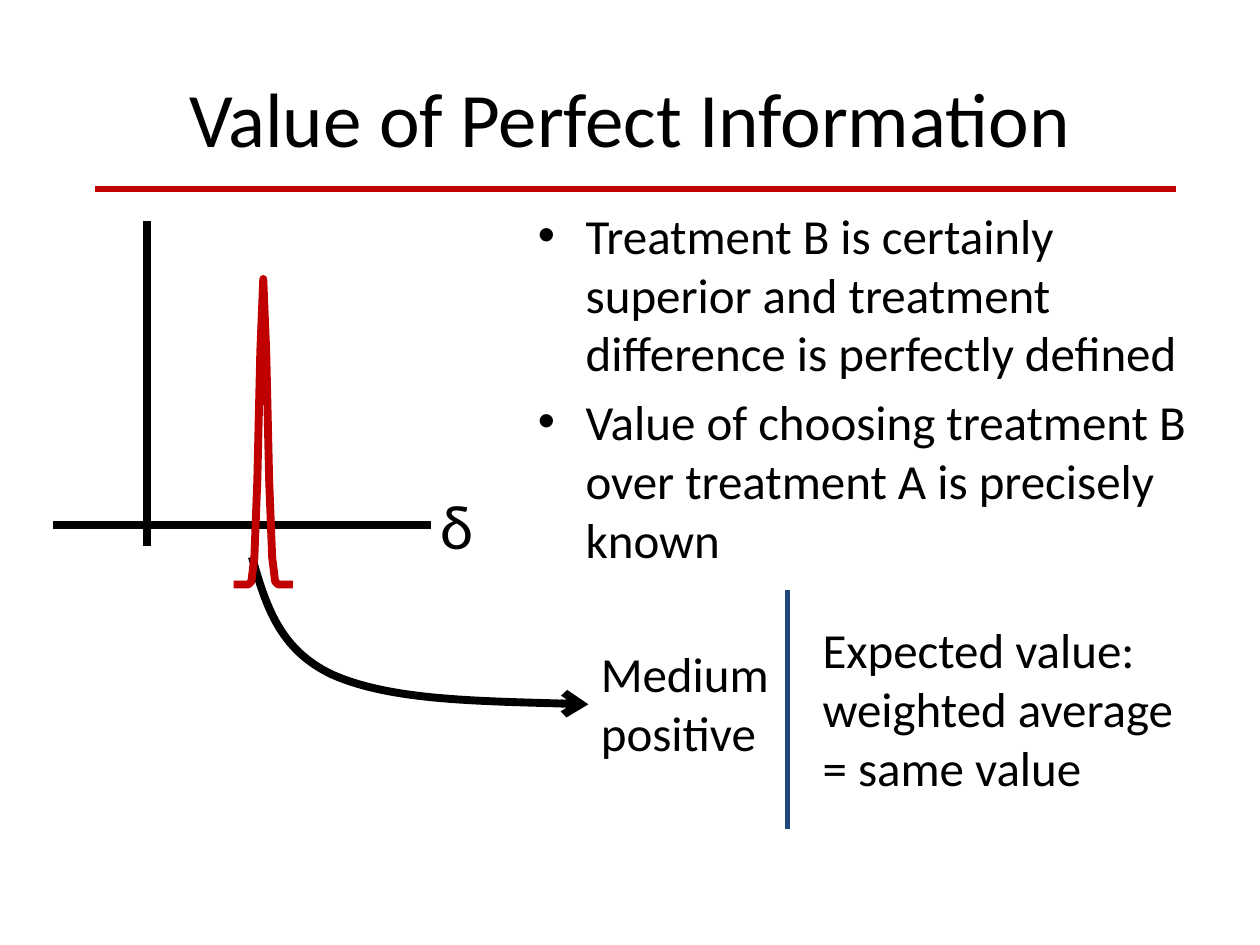
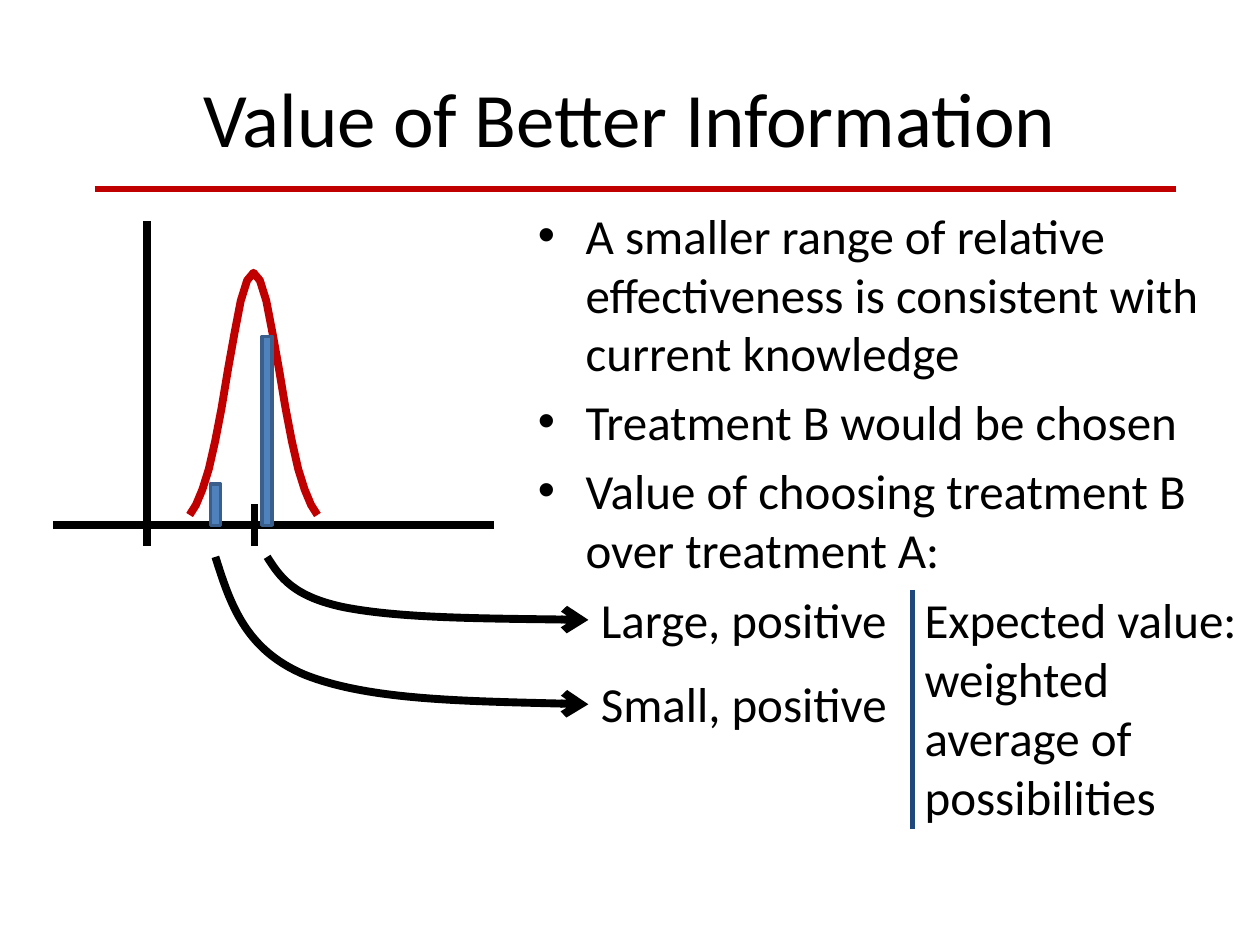
from lxml import etree
from pptx import Presentation
from pptx.chart.data import XyChartData
from pptx.dml.color import RGBColor
from pptx.enum.chart import XL_CHART_TYPE
from pptx.enum.shapes import MSO_CONNECTOR, MSO_SHAPE
from pptx.enum.text import MSO_ANCHOR, PP_ALIGN
from pptx.oxml.ns import qn
from pptx.util import Inches, Pt

BLACK = RGBColor(0x00, 0x00, 0x00)
RED = RGBColor(0xC0, 0x00, 0x00)
NAVY = RGBColor(0x1F, 0x49, 0x7D)
BAR_FILL = RGBColor(0x4F, 0x81, 0xBD)
BAR_EDGE = RGBColor(0x3A, 0x5F, 0x8C)

STRAIGHT = MSO_CONNECTOR.STRAIGHT
RECTANGLE = MSO_SHAPE.RECTANGLE
SMOOTH_SCATTER = XL_CHART_TYPE.XY_SCATTER_SMOOTH_NO_MARKERS
LEFT, CENTER = PP_ALIGN.LEFT, PP_ALIGN.CENTER
TOP, MIDDLE = MSO_ANCHOR.TOP, MSO_ANCHOR.MIDDLE

FONT = "Calibri"
TITLE_SIZE, BODY_SIZE, SYMBOL_SIZE = 44, 28, 36
HEAVY, THIN = 4.5, 3
PARAGRAPH_GAP = 5.6
BASELINE = 4.17
CALLOUT_TOP, CALLOUT_LEFT = 4.42, 4.67

# Two joined Bezier segments, as fractions of a callout's width and height
CALLOUT_CURVE = [(0, 0), (0.04, 0.32), (0.08, 0.63), (0.24, 0.8),
                 (0.41, 0.97), (0.7, 0.98), (1, 1)]


def inches(*lengths):
    return [Inches(length) for length in lengths]


class Deck:
    def __init__(self):
        self.prs = Presentation()
        self.prs.slide_width, self.prs.slide_height = inches(10, 7.5)
        self.slide = None

    def add_slide(self, title, bullets):
        """Start a slide with the shared title, rule, and bullet list."""
        self.slide = self.prs.slides.add_slide(self.prs.slide_layouts[6])
        self.text((0.5, 0.3, 9, 1.25), [title], TITLE_SIZE,
                  align=CENTER, anchor=MIDDLE)
        self.text((4.17, 1.58, 5.58, 3.33), bullets, gap=PARAGRAPH_GAP,
                  bulleted=True)
        self.line((0.75, 1.5), (9.33, 1.5), RED, THIN)

    def text(self, box, lines, size=BODY_SIZE, align=LEFT, anchor=TOP,
             gap=0, wrap=True, bulleted=False):
        frame = self.slide.shapes.add_textbox(*inches(*box)).text_frame
        frame.word_wrap = wrap
        frame.vertical_anchor = anchor
        frame.text = "\n".join(lines)
        for paragraph in frame.paragraphs:
            paragraph.alignment = align
            paragraph.space_before = Pt(gap)
            paragraph.font.name = FONT
            paragraph.font.size = Pt(size)
            paragraph.font.color.rgb = BLACK
            if bulleted:
                props = paragraph._p.get_or_add_pPr()
                props.set("marL", str(Inches(0.38)))
                props.set("indent", str(Inches(-0.38)))
                etree.SubElement(props, qn("a:buFont")).set("typeface", "Arial")
                etree.SubElement(props, qn("a:buChar")).set("char", "•")
                # Default run properties must follow the bullet
                props.append(props.find(qn("a:defRPr")))

    def line(self, start, end, color=BLACK, width=HEAVY):
        line = self.slide.shapes.add_connector(STRAIGHT, *inches(*start, *end))
        line.line.color.rgb = color
        line.line.width = Pt(width)
        etree.SubElement(line._element.spPr, qn("a:effectLst"))

    def axes(self, right):
        self.line((0.42, BASELINE), (right, BASELINE))
        self.line((1.17, 4.33), (1.17, 1.75))

    def bar(self, left, height):
        bar = self.slide.shapes.add_shape(
            RECTANGLE, *inches(left, BASELINE - height, 0.08, height))
        bar.shadow.inherit = False
        bar.fill.solid()
        bar.fill.fore_color.rgb = BAR_FILL
        bar.line.color.rgb = BAR_EDGE
        bar.line.width = Pt(2)

    def callout(self, left, height):
        """Draw a curved arrow from below the axis to the outcome labels."""
        width = CALLOUT_LEFT - left
        points = [inches(left + x * width, CALLOUT_TOP + y * height)
                  for x, y in CALLOUT_CURVE]
        builder = self.slide.shapes.build_freeform(*points[0])
        builder.add_line_segments(points[1:], close=False)
        arrow = builder.convert_to_shape()
        arrow.shadow.inherit = False
        arrow.fill.background()
        arrow.line.color.rgb = BLACK
        arrow.line.width = Pt(HEAVY)
        etree.SubElement(arrow.line._get_or_add_ln(),
                         qn("a:tailEnd")).set("type", "arrow")
        # Every three line points become one cubic segment
        steps = list(arrow._element.iter(qn("a:lnTo")))
        for first in range(0, len(steps), 3):
            curve = etree.Element(qn("a:cubicBezTo"))
            steps[first].addprevious(curve)
            for step in steps[first:first + 3]:
                curve.append(step[0])
                step.getparent().remove(step)

    def density(self, box, plot, xs, ys, x_range):
        """Draw a bell curve as a scatter chart with hidden axes."""
        data = XyChartData()
        series = data.add_series("Series 1")
        for x, y in zip(xs, ys):
            series.add_data_point(x, y)
        chart = self.slide.shapes.add_chart(
            SMOOTH_SCATTER, *inches(*box), data).chart
        chart.has_legend = chart.has_title = False
        chart.font.name, chart.font.size = FONT, Pt(10)
        chart.font.color.rgb = BLACK
        for axis, (low, high) in ((chart.category_axis, x_range),
                                  (chart.value_axis, (0, 120))):
            axis.minimum_scale, axis.maximum_scale = low, high
            axis.has_major_gridlines = False
            axis.visible = False
        curve = chart.plots[0].series[0]
        curve.smooth = True
        curve.format.line.color.rgb = RED
        curve.format.line.width = Pt(HEAVY)

        # Fixed inner plot area
        area = chart._chartSpace.find(".//" + qn("c:plotArea"))
        layout = area.find(qn("c:layout"))
        if layout is None:
            layout = etree.Element(qn("c:layout"))
            area.insert(0, layout)
        manual = etree.SubElement(layout, qn("c:manualLayout"))
        settings = [("layoutTarget", "inner"), ("xMode", "edge"),
                    ("yMode", "edge"), *zip("xywh", plot)]
        for tag, value in settings:
            etree.SubElement(manual, qn("c:" + tag)).set("val", str(value))

    def expected_value(self, divider, box, message):
        self.text(box, [message], gap=PARAGRAPH_GAP)
        self.line((divider, 4.68), (divider, 6.58), NAVY, THIN)


def perfect_information(deck):
    deck.add_slide("Value of Perfect Information", [
        "Treatment B is certainly superior and treatment difference is "
        "perfectly defined",
        "Value of choosing treatment B over treatment A is precisely known"])
    deck.axes(right=3.42)
    deck.callout(2, 1.17)
    deck.text((CALLOUT_LEFT, 5.06, 1.55, 1.04), ["Medium", "positive"],
              wrap=False)
    deck.expected_value(6.25, (6.43, 4.87, 3.15, 1.52),
                        "Expected value: weighted average = same value")
    deck.text((3.4, 3.81, 0.45, 0.71), ["δ"], SYMBOL_SIZE, wrap=False)
    # Narrow symmetric peak
    rise = [0, 0, 0, 0, 0, 0, 1, 9, 34, 76]
    deck.density((1.79, 1.7, 0.67, 3), (0.06, 0.01, 0.88, 0.97),
                 range(1, 22), rise + [100] + rise[::-1], (0, 25))


def better_information(deck):
    deck.add_slide("Value of Better Information", [
        "A smaller range of relative effectiveness is consistent with "
        "current knowledge",
        "Treatment B would be chosen",
        "Value of choosing treatment B over treatment A:"])
    deck.axes(right=3.92)
    deck.line((2.02, 4), (2.02, 4.33), width=4.25)
    # Wider symmetric peak
    rise = [5, 9, 15, 23, 34, 47, 62, 76, 89, 97]
    deck.density((1.17, 1.67, 1.62, 3), (0.05, 0.03, 0.94, 0.81),
                 [step / 10 for step in range(-10, 11)],
                 rise + [100] + rise[::-1], (-1.5, 1.5))
    # Two possible outcomes and their values
    deck.bar(1.67, 0.33)
    deck.bar(2.08, 1.5)
    deck.callout(2.12, 0.5)
    deck.callout(1.71, 1.17)
    for top, outcome in ((4.63, "Large, positive"), (5.3, "Small, positive")):
        deck.text((CALLOUT_LEFT, top, 2.5, 0.57), [outcome], wrap=False)
    deck.expected_value(7.24, (7.24, 4.63, 2.76, 2.17),
                        "Expected value: weighted average of possibilities")


def main():
    deck = Deck()
    perfect_information(deck)
    better_information(deck)
    deck.prs.save("out.pptx")


if __name__ == "__main__":
    main()
